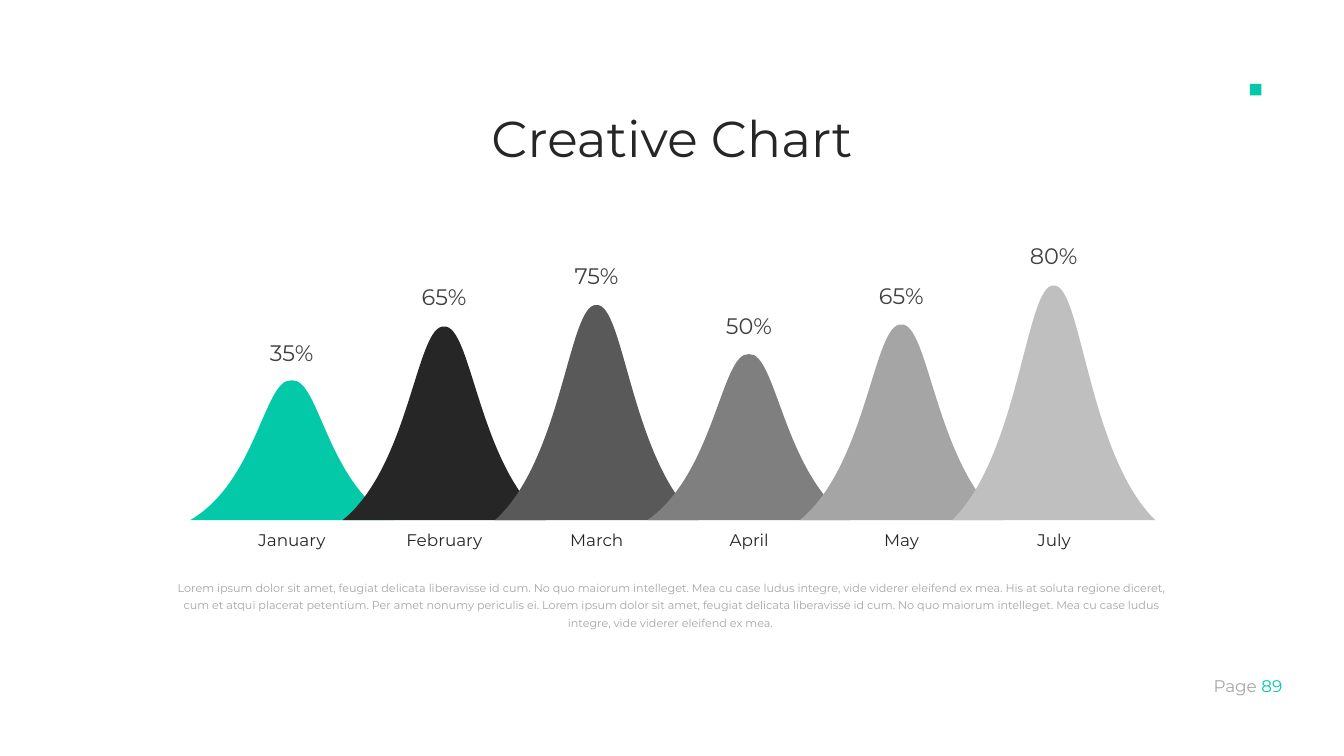
import pptx
import pptx.util
import pptx.dml.color
import pptx.enum.shapes
import pptx.enum.text
import pptx.oxml.ns
from dataclasses import dataclass
from lxml import etree

Inches = pptx.util.Inches
ALIGN = pptx.enum.text.PP_ALIGN
ANCHOR = pptx.enum.text.MSO_ANCHOR
qn = pptx.oxml.ns.qn


@dataclass(frozen=True)
class Theme:
    font: str = "Montserrat"
    accent: str = "03C9A9"
    dark: str = "262626"
    value: str = "404040"
    muted: str = "A6A6A6"
    peaks: tuple = ("03C9A9", "262626", "595959", "7F7F7F", "A5A5A5", "BFBFBF")
    title_size: int = 54
    value_size: int = 24
    label_size: int = 18
    body_size: int = 12


class Deck:
    def __init__(self, prs, theme):
        self.theme = theme
        self.s = prs.slides.add_slide(prs.slide_layouts[6])

    def paint(self, sp, color):
        sp.shadow.inherit = False
        sp.fill.solid()
        sp.fill.fore_color.rgb = pptx.dml.color.RGBColor.from_string(color)
        sp.line.fill.background()

    def text(self, box, runs, size, align=ALIGN.CENTER, anchor=ANCHOR.TOP,
             before=0, spacing=None):
        """Add one paragraph; runs is a list of (text, colour)."""
        tf = self.s.shapes.add_textbox(*map(Inches, box)).text_frame
        tf.word_wrap = True
        tf.vertical_anchor = anchor
        p = tf.paragraphs[0]
        p.alignment = align
        p.space_before = pptx.util.Pt(before)
        if spacing:
            p.line_spacing = spacing
        for words, color in runs:
            r = p.add_run()
            r.text = words
            r.font.name = self.theme.font
            r.font.size = pptx.util.Pt(size)
            r.font.color.rgb = pptx.dml.color.RGBColor.from_string(color)

    def square(self, box, color):
        sp = self.s.shapes.add_shape(
            pptx.enum.shapes.MSO_SHAPE.RECTANGLE, *map(Inches, box))
        self.paint(sp, color)

    def peak(self, center, base, height, color):
        """Draw a bell from a base line and two mirrored cubic curves."""
        right = [(1.51, 0), (0.51, 0.28 * height), (0.41, height + 0.04)]
        left = [(-x, y) for x, y in reversed(right)]
        offsets = [(0, 0), *right, (0, height), *left]
        points = [(Inches(center + x), Inches(base - y)) for x, y in offsets]
        builder = self.s.shapes.build_freeform(*points[0])
        builder.add_line_segments(points[1:], close=True)
        sp = builder.convert_to_shape()
        # Turn each three points after the base line into one curve
        lines = list(sp._element.iter(qn("a:lnTo")))[1:7]
        for group in (lines[:3], lines[3:]):
            curve = etree.Element(qn("a:cubicBezTo"))
            group[0].addprevious(curve)
            for line in group:
                curve.append(line[0])
                line.getparent().remove(line)
        self.paint(sp, color)


# Month, value, peak height and top of the value label in inches
MONTHS = [
    ("January", "35%", 2.08, 4.99),
    ("February", "65%", 2.88, 4.17),
    ("March", "75%", 3.2, 3.85),
    ("April", "50%", 2.47, 4.6),
    ("May", "65%", 2.91, 4.15),
    ("July", "80%", 3.49, 3.56),
]
FIRST_CENTER, LAST_CENTER, BASE = 4.34, 15.68, 7.74
BODY = (
    "Lorem ipsum dolor sit amet, feugiat delicata liberavisse id cum. "
    "No quo maiorum intelleget. Mea cu case ludus integre, vide viderer "
    "eleifend ex mea. His at soluta regione diceret, cum et atqui placerat "
    "petentium. Per amet nonumy periculis ei. Lorem ipsum dolor sit amet, "
    "feugiat delicata liberavisse id cum. No quo maiorum intelleget. "
    "Mea cu case ludus integre, vide viderer eleifend ex mea. "
)


def main():
    prs = pptx.Presentation()
    prs.slide_width, prs.slide_height = Inches(20), Inches(11.25)
    theme = Theme()
    deck = Deck(prs, theme)

    # Page number and corner mark
    deck.text((17.42, 10.01, 1.76, 0.4),
              [("Page ", theme.muted), ("89", theme.accent)],
              theme.label_size, align=ALIGN.RIGHT)
    deck.square((18.6, 1.25, 0.17, 0.17), theme.accent)

    # Peaks, each overlapping the one before
    pitch = (LAST_CENTER - FIRST_CENTER) / (len(MONTHS) - 1)
    centers = [FIRST_CENTER + i * pitch for i in range(len(MONTHS))]
    for center, (_, _, height, _), color in zip(centers, MONTHS, theme.peaks):
        deck.peak(center, BASE, height, color)

    # Values above the peaks
    for center, (_, value, _, top) in zip(centers, MONTHS):
        deck.text((center - 0.66, top, 1.32, 0.5),
                  [(value, theme.value)], theme.value_size)

    # Months below the base line
    for center, (month, *_) in zip(centers, MONTHS):
        deck.text((center - 0.95, BASE + 0.05, 1.91, 0.49),
                  [(month, theme.dark)], theme.label_size,
                  anchor=ANCHOR.MIDDLE)

    # Title and description
    deck.text((5.25, 1.54, 9.5, 1.01), [("Creative Chart", theme.dark)],
              theme.title_size, before=6)
    deck.text((2.5, 8.54, 15, 0.89), [(BODY, theme.muted)],
              theme.body_size, before=12, spacing=1.3)

    prs.save("out.pptx")


if __name__ == "__main__":
    main()
